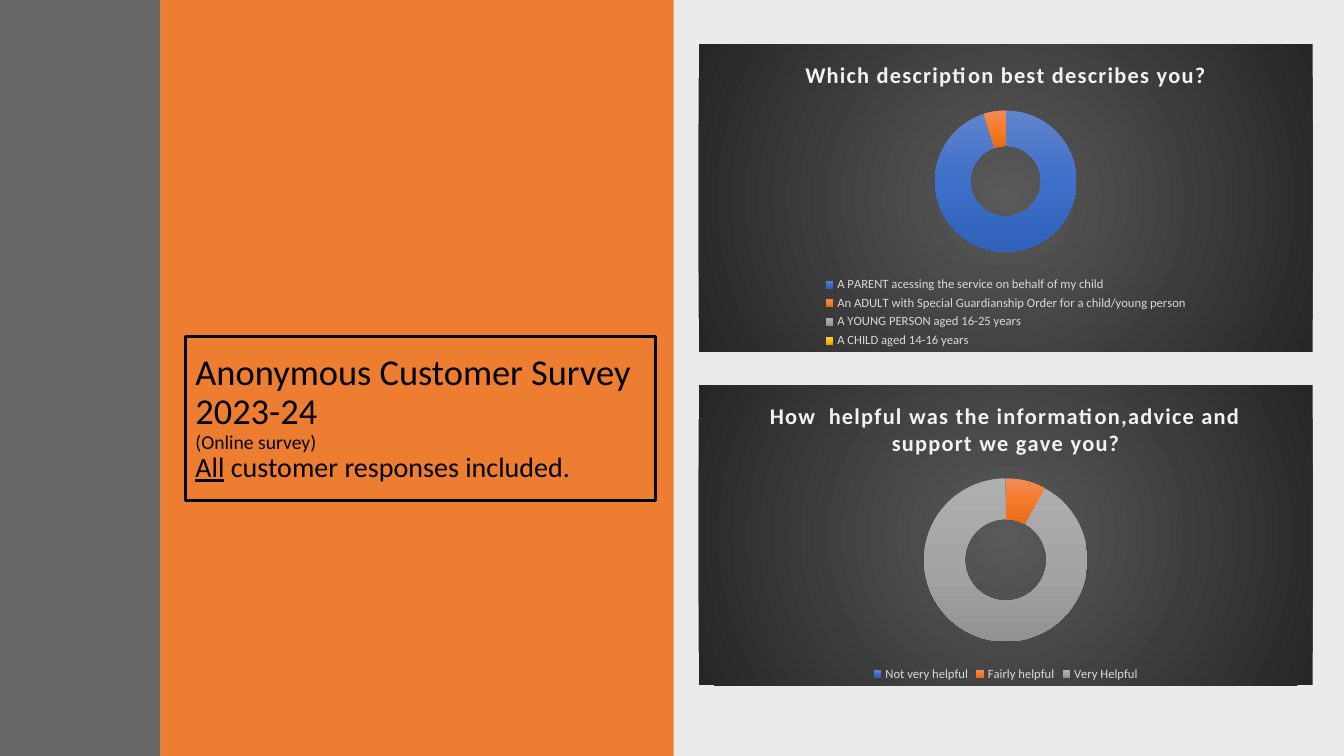
from lxml import etree
from pptx import Presentation
from pptx.chart.data import CategoryChartData
from pptx.dml.color import RGBColor
from pptx.enum.chart import XL_CHART_TYPE, XL_LEGEND_POSITION
from pptx.enum.shapes import MSO_SHAPE
from pptx.enum.text import MSO_ANCHOR
from pptx.oxml import parse_xml
from pptx.oxml.ns import qn
from pptx.util import Inches, Pt

RECT = MSO_SHAPE.RECTANGLE
DOUGHNUT = XL_CHART_TYPE.DOUGHNUT
BOTTOM = XL_LEGEND_POSITION.BOTTOM
MIDDLE = MSO_ANCHOR.MIDDLE
NS_A = "http://schemas.openxmlformats.org/drawingml/2006/main"
NS_C = "http://schemas.openxmlformats.org/drawingml/2006/chart"
FONT = "Calibri"

# Content: left, width, colour, opacity in percent
PANELS = [
    (6.67, 6.67, "000000", 8),
    (1.59, 5.09, "ED7D31", 100),
    (0, 1.59, "404040", 80),
]
# Lines of the heading, each a list of (text, size, underline)
HEADING = [
    [("Anonymous Customer Survey 2023-24", 26, False)],
    [("(Online survey)", 14, False)],
    [("All", 20, True), (" customer responses included.", 20, False)],
]
CHARTS = [
    {"top": 0.44, "height": 3.05,
     "title": "Which description best describes you?",
     "answers": [
         ("A PARENT acessing the service on behalf of my child", 95),
         ("An ADULT with Special Guardianship Order for a child/young person", 5),
         ("A YOUNG PERSON aged 16-25 years", 0),
         ("A CHILD aged 14-16 years", 0)]},
    {"top": 3.82, "height": 2.98,
     "title": "How  helpful was the information,advice and support we gave you?",
     "answers": [
         ("Not very helpful", 0),
         ("Fairly helpful", 8),
         ("Very Helpful", 92)]},
]
CHART_LEFT, CHART_WIDTH = 6.93, 6.09
BACKDROP = ["595959", "262626"]
SLICES = [
    ["6183CB", "3E70CA", "3062BB"],
    ["F18C57", "F67B28", "E56C19"],
    ["AFAFAF", "A5A5A5", "939393"],
    ["FFC64B", "FFC000", "E3AB00"],
]


def rgb(value):
    return RGBColor.from_string(value)


def add_run(p, text, size, color, bold=False, underline=False, spacing=0):
    r = p.add_run()
    r.text = text
    f = r.font
    f.name, f.size, f.bold, f.underline = FONT, Pt(size), bold, underline
    f.color.rgb = rgb(color)
    if spacing:
        r._r.get_or_add_rPr().set("spc", str(spacing * 100))


def add_panel(s, left, width, color, opacity):
    sp = s.shapes.add_shape(RECT, Inches(left), 0, Inches(width), prs.slide_height)
    sp.shadow.inherit = False
    sp.line.fill.background()
    sp.fill.solid()
    sp.fill.fore_color.rgb = rgb(color)
    if opacity < 100:
        clr = sp._element.spPr.find(".//" + qn("a:srgbClr"))
        etree.SubElement(clr, qn("a:alpha")).set("val", str(opacity * 1000))


def gradient(colors, radial=False):
    """Evenly spaced stops, running downwards or out from the centre."""
    step = 100000 // (len(colors) - 1)
    stops = "".join(f'<a:gs pos="{i * step}"><a:srgbClr val="{c}"/></a:gs>'
                    for i, c in enumerate(colors))
    course = ('<a:path path="circle"><a:fillToRect l="50000" t="50000" '
              'r="50000" b="50000"/></a:path>' if radial
              else '<a:lin ang="5400000" scaled="0"/>')
    return (f'<a:gradFill xmlns:a="{NS_A}" rotWithShape="1">'
            f'<a:gsLst>{stops}</a:gsLst>{course}</a:gradFill>')


def add_doughnut(s, top, height, title, answers):
    data = CategoryChartData()
    data.categories = [name for name, _ in answers]
    data.add_series("Series 1", [value for _, value in answers])
    chart = s.shapes.add_chart(DOUGHNUT, Inches(CHART_LEFT), Inches(top),
                               Inches(CHART_WIDTH), Inches(height), data).chart
    chart.font.name, chart.font.size = FONT, Pt(10)
    chart.font.color.rgb = rgb("000000")

    # Title and legend
    chart.has_title = True
    add_run(chart.chart_title.text_frame.paragraphs[0], title, 16, "F2F2F2",
            bold=True, spacing=1)
    chart.chart_title.include_in_layout = False
    chart.has_legend = True
    legend = chart.legend
    legend.position = BOTTOM
    legend.include_in_layout = False
    legend.font.name, legend.font.size = FONT, Pt(9)
    legend.font.color.rgb = rgb("D9D9D9")

    # Ring and slices
    plot = chart.plots[0]
    plot.vary_by_categories = True
    root = chart._chartSpace
    root.find(".//" + qn("c:holeSize")).set("val", "75")
    for i in range(len(answers)):
        fmt = plot.series[0].points[i].format
        fmt.fill.solid()
        fmt.line.fill.background()
    for pt, colors in zip(root.iter(qn("c:dPt")), SLICES):
        solid = pt.find(qn("c:spPr")).find(qn("a:solidFill"))
        solid.getparent().replace(solid, parse_xml(gradient(colors)))

    # Dark backdrop
    root.find(qn("c:txPr")).addprevious(parse_xml(
        f'<c:spPr xmlns:c="{NS_C}" xmlns:a="{NS_A}">'
        f'{gradient(BACKDROP, radial=True)}<a:ln><a:noFill/></a:ln></c:spPr>'))


prs = Presentation()
prs.slide_width, prs.slide_height = Inches(13.33), Inches(7.5)
s = prs.slides.add_slide(prs.slide_layouts[6])

# Background panels
for panel in PANELS:
    add_panel(s, *panel)

# Framed heading
box = s.shapes.add_textbox(Inches(1.84), Inches(3.34), Inches(4.66), Inches(1.63))
box.line.color.rgb = rgb("000000")
box.line.width = Pt(2)
tf = box.text_frame
tf.word_wrap = True
tf.vertical_anchor = MIDDLE
p = tf.paragraphs[0]
for i, line in enumerate(HEADING):
    if i:
        p = tf.add_paragraph()
    p.line_spacing = 0.9
    for text, size, underline in line:
        add_run(p, text, size, "000000", underline=underline)

# Survey charts
for survey in CHARTS:
    add_doughnut(s, **survey)

prs.save("out.pptx")
